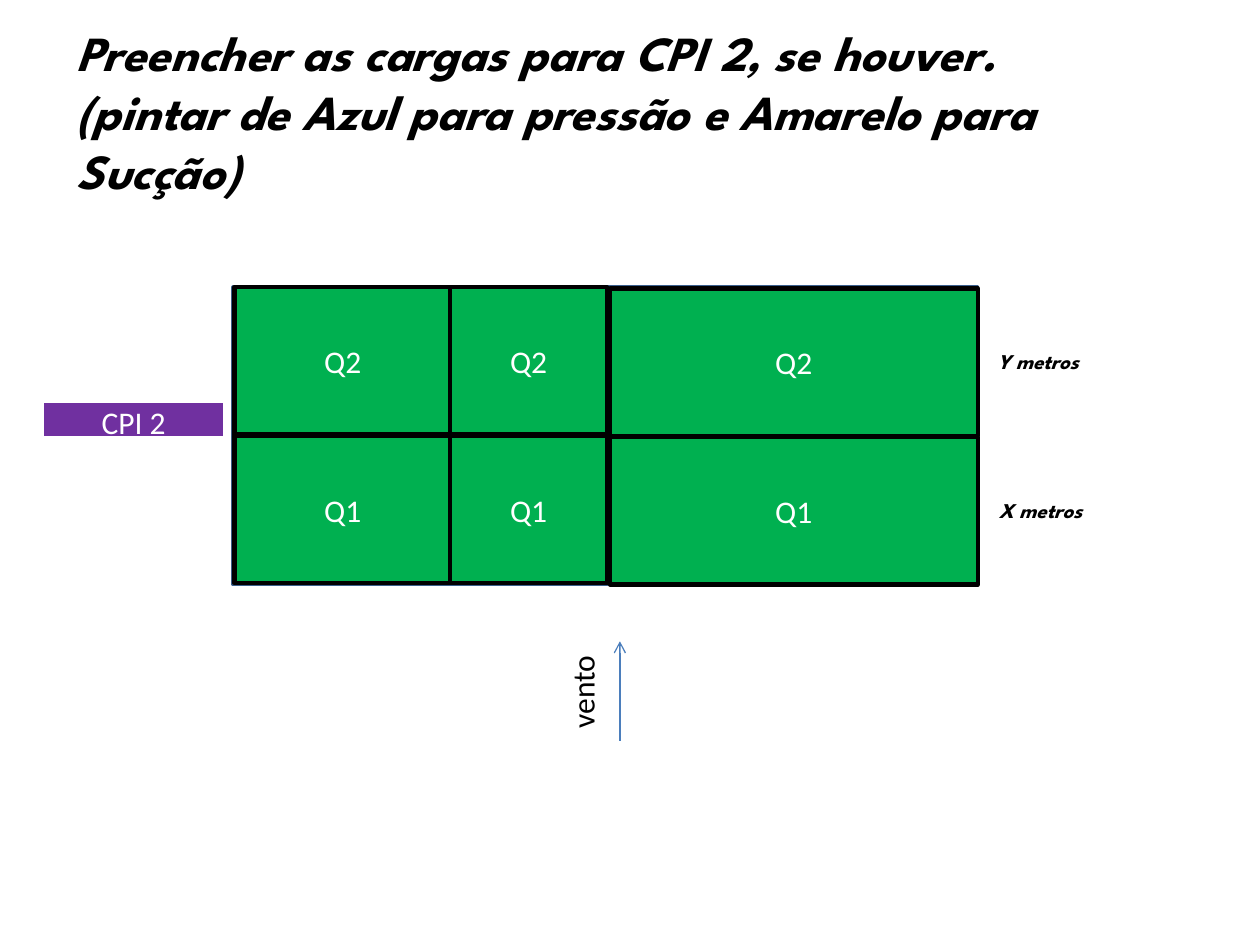
from dataclasses import dataclass

from lxml.etree import SubElement
from pptx import Presentation
from pptx.dml.color import RGBColor
from pptx.enum.shapes import MSO_CONNECTOR, MSO_SHAPE
from pptx.enum.text import MSO_ANCHOR, MSO_AUTO_SIZE, PP_ALIGN
from pptx.oxml.ns import qn
from pptx.util import Inches, Pt


@dataclass(frozen=True)
class Theme:
    black: str = "000000"
    white: str = "FFFFFF"
    green: str = "00B050"
    purple: str = "7030A0"
    outline: str = "3A5F8C"
    wind: str = "4B7EBC"
    body_font: str = "Calibri"
    accent_font: str = "League Spartan"
    title_size: int = 28
    body_size: int = 18
    note_size: int = 12


THEME = Theme()
TITLE = ("Preencher as cargas para CPI 2, se houver. "
         "(pintar de Azul para pressão e Amarelo para Sucção)")

# Left, width and vertical offset of each column of panels
COLUMNS = [(1.86, 1.72, 0), (3.57, 1.25, 0), (4.84, 2.92, 0.01)]
ROWS = [("Q1", 3.46), ("Q2", 2.28)]
PANEL_HEIGHT = 1.17


def rgb(value):
    return RGBColor.from_string(value)


def write_text(shape, text, size=THEME.body_size, font=THEME.body_font,
               color=THEME.black, emphasis=False, align=PP_ALIGN.LEFT,
               anchor=MSO_ANCHOR.TOP, auto_size=MSO_AUTO_SIZE.NONE):
    """Fill a shape with one run; emphasis means bold italic."""
    frame = shape.text_frame
    frame.word_wrap = True
    frame.auto_size = auto_size
    frame.vertical_anchor = anchor
    paragraph = frame.paragraphs[0]
    paragraph.alignment = align
    run = paragraph.add_run()
    run.text = text
    run.font.size = Pt(size)
    run.font.name = font
    run.font.bold = run.font.italic = emphasis
    run.font.color.rgb = rgb(color)


def add_title(slide, text):
    title = slide.shapes.title
    title.left, title.top = Inches(0.51), Inches(0.13)
    title.width, title.height = Inches(8.11), Inches(1.51)
    write_text(title, text, size=THEME.title_size, font=THEME.accent_font,
               emphasis=True)


def add_rectangle(slide, left, top, width, height, text=None, fill=None,
                  line=None, line_width=2.5):
    shape = slide.shapes.add_shape(
        MSO_SHAPE.RECTANGLE, Inches(left), Inches(top), Inches(width), Inches(height))
    shape.shadow.inherit = False
    if fill:
        shape.fill.solid()
        shape.fill.fore_color.rgb = rgb(fill)
    else:
        shape.fill.background()
    if line:
        shape.line.color.rgb = rgb(line)
        shape.line.width = Pt(line_width)
    else:
        shape.line.fill.background()
    if text:
        write_text(shape, text, color=THEME.white, align=PP_ALIGN.CENTER,
                   anchor=MSO_ANCHOR.MIDDLE)
    return shape


def add_label(slide, left, top, width, height, text, rotation=0, **text_format):
    box = slide.shapes.add_textbox(
        Inches(left), Inches(top), Inches(width), Inches(height))
    box.rotation = rotation
    write_text(box, text, auto_size=MSO_AUTO_SIZE.SHAPE_TO_FIT_TEXT, **text_format)


def add_arrow(slide, start, end, color, width):
    arrow = slide.shapes.add_connector(
        MSO_CONNECTOR.STRAIGHT, *(Inches(value) for value in (*start, *end)))
    arrow.line.color.rgb = rgb(color)
    arrow.line.width = Pt(width)
    SubElement(arrow.line._get_or_add_ln(), qn("a:tailEnd"), type="arrow")
    SubElement(arrow._element.spPr, qn("a:effectLst"))


def add_panels(slide):
    add_rectangle(slide, 1.85, 2.28, 5.91, 2.36, line=THEME.outline, line_width=2)
    for left, width, offset in COLUMNS:
        for name, top in ROWS:
            add_rectangle(slide, left, top + offset, width, PANEL_HEIGHT, name,
                          fill=THEME.green, line=THEME.black)


def add_wind(slide):
    add_arrow(slide, (4.92, 5.88), (4.92, 5.09), THEME.wind, 0.75)
    add_label(slide, 4.15, 5.21, 0.94, 0.4, "vento", rotation=270)


def main():
    presentation = Presentation()
    presentation.slide_width = Inches(10)
    presentation.slide_height = Inches(7.5)
    slide = presentation.slides.add_slide(presentation.slide_layouts[5])

    add_title(slide, TITLE)
    add_panels(slide)
    add_wind(slide)

    cpi_tag = add_rectangle(slide, 0.35, 3.2, 1.42, 0.26, "CPI 2", fill=THEME.purple)
    cpi_tag.text_frame.margin_top = Inches(0.03)
    cpi_tag.text_frame.margin_bottom = 0

    for text, left, top in [("X metros", 7.83, 3.9), ("Y metros", 7.82, 2.72)]:
        add_label(slide, left, top, 0.98, 0.3, text, size=THEME.note_size,
                  font=THEME.accent_font, emphasis=True)

    presentation.save("out.pptx")


if __name__ == "__main__":
    main()
